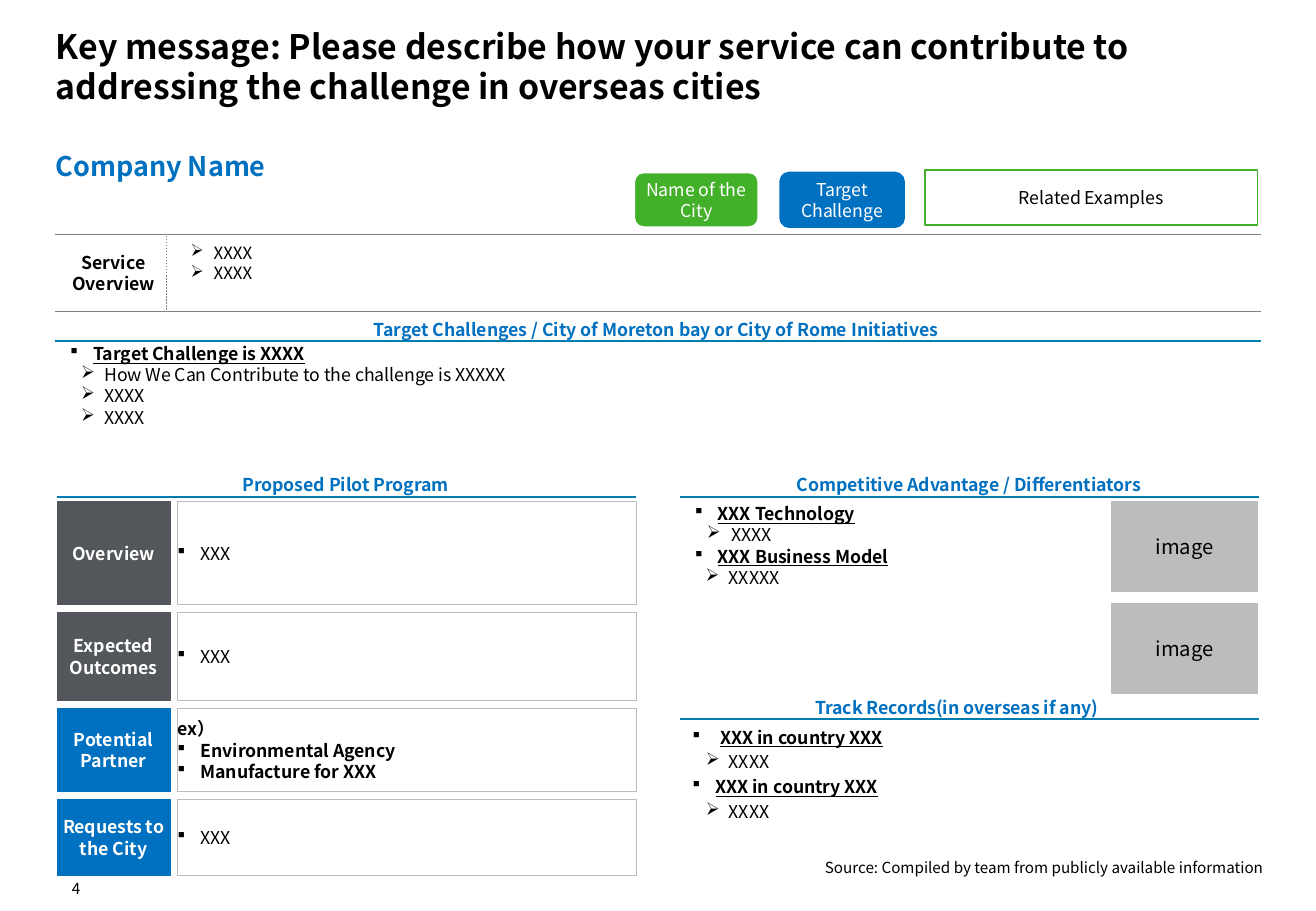
from dataclasses import dataclass

from lxml.etree import SubElement
from pptx import Presentation
from pptx.dml.color import RGBColor
from pptx.enum.dml import MSO_LINE
from pptx.enum.shapes import MSO_CONNECTOR, MSO_SHAPE as Preset
from pptx.enum.text import MSO_ANCHOR as Anchor, PP_ALIGN as Align
from pptx.oxml.ns import qn
from pptx.util import Inches, Pt


@dataclass(frozen=True)
class Theme:
    font: str = "Noto Sans CJK JP"
    symbol_font: str = "Wingdings"
    black: str = "000000"
    white: str = "FFFFFF"
    blue: str = "0070C0"
    green: str = "43B02A"
    teal: str = "007CB0"
    slate: str = "53565A"
    silver: str = "BBBCBC"
    border: str = "BCBCB9"
    gray: str = "808080"
    title: float = 20
    company: float = 16
    image: float = 12
    body: float = 10.5
    overview: float = 10
    small: float = 9
    leading: float = 1.2


THEME = Theme()

TITLE = "Key message: Please describe how your service can contribute to addressing the challenge in overseas cities"
COMPANY = "Company Name"
SOURCE = "Source: Compiled by team from publicly available information"
PAGE_NUMBER = "4"

SQUARE, ARROW = "§", "Ø"
STYLES = {
    "plain": dict(bold=True),
    "item": dict(bullet=SQUARE, left=0.19, hang=0.19),
    "bold item": dict(bullet=SQUARE, left=0.19, hang=0.19, bold=True),
    "topic": dict(bullet=SQUARE, left=0.19, hang=0.19, bold=True, underline=True),
    "wide topic": dict(bullet=SQUARE, left=0.23, hang=0.23, bold=True, underline=True),
    "detail": dict(bullet=ARROW, left=0.28, hang=0.19, level=1),
    "record": dict(bullet=ARROW, left=0.3, hang=0.19, level=1),
    "feature": dict(bullet=ARROW, left=0.3, hang=0.2),
}

SERVICE = [("detail", "XXXX"), ("detail", "XXXX")]
CHALLENGES = [
    ("topic", "Target Challenge is XXXX"),
    ("detail", "How We Can Contribute to the challenge is XXXXX"),
    ("detail", "XXXX"),
    ("detail", "XXXX"),
]
ADVANTAGES = [
    ("topic", "XXX Technology"),
    ("feature", "XXXX"),
    ("topic", "XXX Business Model"),
    ("detail", "XXXXX"),
]
RECORDS = [
    ("wide topic", "XXX in country XXX"),
    ("record", "XXXX"),
    ("topic", "XXX in country XXX"),
    ("record", "XXXX"),
]
PARTNERS = [
    ("plain", "ex）"),
    ("bold item", "Environmental Agency"),
    ("bold item", "Manufacture for XXX"),
]
PILOT_ROWS = [
    ("Overview", THEME.slate, 0.85, [("item", "XXX")]),
    ("Expected Outcomes", THEME.slate, 0.73, [("item", "XXX")]),
    ("Potential\nPartner", THEME.blue, 0.69, PARTNERS),
    ("Requests to the City", THEME.blue, 0.63, [("item", "XXX")]),
]
HEADINGS = [
    ("Target Challenges / City of Moreton bay or City of Rome Initiatives", 0.45, 2.81, 9.93, 9.9),
    ("Proposed Pilot Program", 0.47, 4.09, 4.76, 4.75),
    ("Competitive Advantage / Differentiators", 5.6, 4.09, 4.76, 4.75),
    ("Track Records(in overseas if any)", 5.6, 5.92, 4.76, 4.55),
]
TAGS = [
    ("Name of the City", Preset.ROUNDED_RECTANGLE, (5.22, 1.42, 1.02, 0.45), THEME.green, THEME.white, THEME.white),
    ("Target Challenge", Preset.ROUNDED_RECTANGLE, (6.42, 1.42, 1.02, 0.45), THEME.blue, THEME.blue, THEME.white),
    ("Related Examples", Preset.RECTANGLE, (7.61, 1.4, 2.74, 0.45), THEME.white, THEME.green, THEME.black),
]
TEXT_BLOCKS = [
    (SERVICE, (1.38, 1.95, 5.42, 0.44), THEME.overview, 0),
    (CHALLENGES, (0.48, 2.77, 9.93, 0.81), THEME.body, 0),
    (ADVANTAGES, (5.62, 4.09, 3.26, 0.81), THEME.body, 0),
    (RECORDS, (5.6, 5.93, 4.75, 0.89), THEME.body, 2),
]
PILOT_TOP, PILOT_GAP = 4.13, 0.06
IMAGE_TOP, IMAGE_STEP = 4.13, 0.84


def color(code):
    return RGBColor.from_string(code)


def format_paragraph(paragraph, size, ink=THEME.black, align=Align.LEFT, bold=False,
                     underline=False, bullet=None, left=0, hang=0, level=0, before=0):
    paragraph.alignment = align
    paragraph.level = level
    properties = paragraph._p.get_or_add_pPr()
    properties.set("marL", str(Inches(left)))
    properties.set("indent", str(-Inches(hang)))
    if bullet:
        SubElement(properties, qn("a:buFont"), typeface=THEME.symbol_font, charset="2")
        SubElement(properties, qn("a:buChar"), char=bullet)
    else:
        SubElement(properties, qn("a:buNone"))
    paragraph.line_spacing = Pt(size * THEME.leading)
    paragraph.space_before = Pt(before)
    for run in paragraph.runs:
        run.font.name = THEME.font
        run.font.size = Pt(size)
        run.font.bold = bold
        run.font.underline = underline
        run.font.color.rgb = color(ink)
        SubElement(run._r.get_or_add_rPr(), qn("a:ea"), typeface=THEME.font)


def prepare_frame(shape, anchor, insets=(0, 0, 0, 0)):
    frame = shape.text_frame
    frame.word_wrap = True
    frame.vertical_anchor = anchor
    frame.margin_left, frame.margin_top, frame.margin_right, frame.margin_bottom = map(Inches, insets)
    return frame


def write(frame, text, **style):
    frame.text = text
    for paragraph in frame.paragraphs:
        format_paragraph(paragraph, **style)


def write_list(frame, items, size, before=0):
    frame.text = "\n".join(text for _, text in items)
    for index, (paragraph, (style, _)) in enumerate(zip(frame.paragraphs, items)):
        format_paragraph(paragraph, size, before=before if index else 0, **STYLES[style])


def add_text(slide, box, anchor=Anchor.TOP, insets=(0, 0, 0, 0)):
    return prepare_frame(slide.shapes.add_textbox(*map(Inches, box)), anchor, insets)


def add_box(slide, box, fill=None, outline=None, width=0.5, preset=Preset.RECTANGLE):
    shape = slide.shapes.add_shape(preset, *map(Inches, box))
    shape.shadow.inherit = False
    if fill:
        shape.fill.solid()
        shape.fill.fore_color.rgb = color(fill)
    else:
        shape.fill.background()
    shape.line.color.rgb = color(outline or fill)
    shape.line.width = Pt(width)
    return prepare_frame(shape, Anchor.MIDDLE)


def add_rule(slide, start, end, ink, width, dash=None):
    rule = slide.shapes.add_connector(MSO_CONNECTOR.STRAIGHT, *map(Inches, start + end))
    rule.line.color.rgb = color(ink)
    rule.line.width = Pt(width)
    if dash:
        rule.line.dash_style = dash
    SubElement(rule._element.spPr, qn("a:effectLst"))


def main():
    presentation = Presentation()
    presentation.slide_width, presentation.slide_height = Inches(10.83), Inches(7.5)
    slide = presentation.slides.add_slide(presentation.slide_layouts[6])

    write(add_text(slide, (0.46, 0.21, 9.92, 0.67)), TITLE, size=THEME.title, bold=True)
    write(add_text(slide, (0.46, 1.11, 4.76, 0.51), Anchor.MIDDLE), COMPANY,
          size=THEME.company, ink=THEME.blue, bold=True)
    for text, box in ((SOURCE, (5.63, 7.03, 4.76, 0.19)), (PAGE_NUMBER, (0.46, 7.2, 0.2, 0.19))):
        write(add_text(slide, box, Anchor.BOTTOM), text, size=THEME.small, align=Align.RIGHT)

    for y in (1.93, 2.56):
        add_rule(slide, (0.45, y), (10.38, y), THEME.gray, 0.25)
    add_rule(slide, (1.37, 1.94), (1.37, 2.56), THEME.gray, 0.25, MSO_LINE.DASH)
    write(add_box(slide, (0.47, 1.96, 0.93, 0.57), outline=THEME.white), "Service Overview",
          size=THEME.body, align=Align.CENTER, bold=True)

    for text, left, y, rule_width, text_width in HEADINGS:
        add_rule(slide, (left, y), (left + rule_width, y), THEME.teal, 1)
        frame = add_text(slide, (left, y - 0.24, text_width, 0.28), Anchor.MIDDLE, (0.1, 0.05, 0.1, 0.05))
        write(frame, text, size=THEME.body, ink=THEME.blue, align=Align.CENTER, bold=True)

    for items, box, size, before in TEXT_BLOCKS:
        write_list(add_text(slide, box, insets=(0.1, 0.05, 0, 0.05)), items, size, before)

    top = PILOT_TOP
    for label, fill, height, items in PILOT_ROWS:
        write_list(add_box(slide, (1.46, top, 3.78, height), outline=THEME.border), items, THEME.body)
        write(add_box(slide, (0.47, top, 0.93, height), fill), label,
              size=THEME.body, ink=THEME.white, align=Align.CENTER, bold=True)
        top += height + PILOT_GAP

    for text, preset, box, fill, outline, ink in TAGS:
        write(add_box(slide, box, fill, outline, 1, preset), text,
              size=THEME.body, ink=ink, align=Align.CENTER)
    for index in range(2):
        box = (9.15, IMAGE_TOP + index * IMAGE_STEP, 1.2, 0.74)
        write(add_box(slide, box, THEME.silver, width=1), "image", size=THEME.image, align=Align.CENTER)

    presentation.save("out.pptx")


if __name__ == "__main__":
    main()
